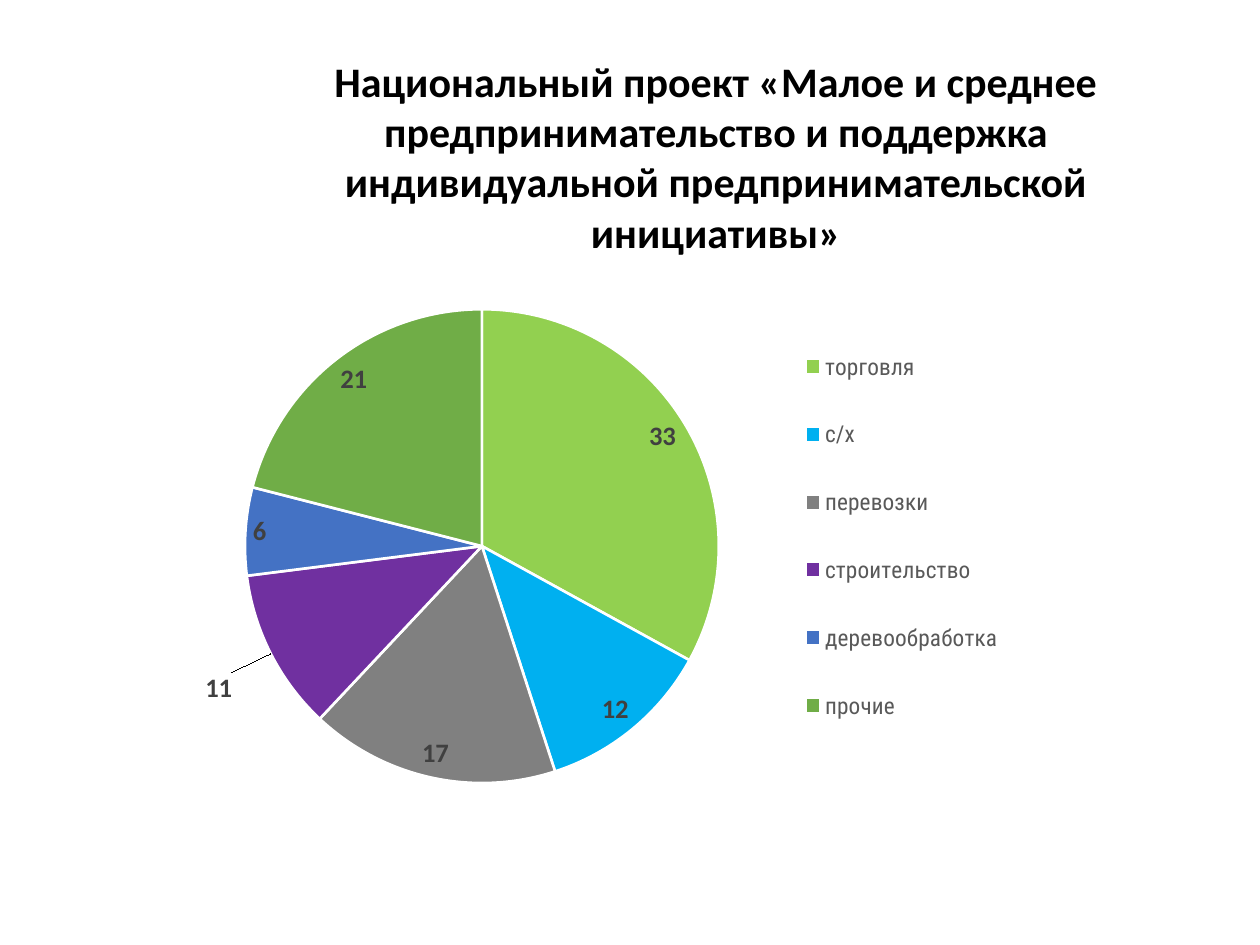
from lxml import etree
from pptx import Presentation
from pptx.chart.data import CategoryChartData
from pptx.dml.color import RGBColor
from pptx.enum.chart import XL_CHART_TYPE, XL_LABEL_POSITION, XL_LEGEND_POSITION
from pptx.enum.text import PP_ALIGN
from pptx.oxml.ns import qn
from pptx.util import Emu, Pt

PIE = XL_CHART_TYPE.PIE
BEST_FIT = XL_LABEL_POSITION.BEST_FIT
LEGEND_RIGHT = XL_LEGEND_POSITION.RIGHT
CENTER = PP_ALIGN.CENTER

EMU_PER_PX = 914400 / 126
BODY_FONT = "Calibri"
LEGEND_FONT = "Roboto Condensed"
TITLE = ("Национальный проект «Малое и среднее предпринимательство и поддержка "
         "индивидуальной предпринимательской инициативы»")
SECTORS = [
    ("торговля", 33, "92D050"),
    ("с/х", 12, "00B0F0"),
    ("перевозки", 17, "808080"),
    ("строительство", 11, "7030A0"),
    ("деревообработка", 6, "4472C4"),
    ("прочие", 21, "70AD47"),
]
MOVED_LABEL = 3


def px(length):
    return Emu(round(length * EMU_PER_PX))


def color(value):
    return RGBColor.from_string(value)


def style_font(font, name, size, value, bold=False):
    font.name = name
    font.size = Pt(size)
    font.color.rgb = color(value)
    font.bold = bold


def set_layout(after, **settings):
    """Put a manual chart layout right after the given element."""
    parent = after.getparent()
    for old in parent.findall(qn("c:layout")):
        parent.remove(old)
    layout = etree.Element(qn("c:layout"))
    manual = etree.SubElement(layout, qn("c:manualLayout"))
    for tag, value in settings.items():
        etree.SubElement(manual, qn(f"c:{tag}")).set("val", str(value))
    after.addnext(layout)


def add_title(page):
    box = page.shapes.add_textbox(px(217), px(49), px(998), px(217))
    frame = box.text_frame
    frame.word_wrap = True
    para = frame.paragraphs[0]
    para.text = TITLE
    para.alignment = CENTER
    style_font(para.font, BODY_FONT, 24, "000000", True)


def style_slices(series):
    for index, (_, _, fill) in enumerate(SECTORS):
        slice_format = series.points[index].format
        slice_format.fill.solid()
        slice_format.fill.fore_color.rgb = color(fill)
        slice_format.line.color.rgb = color("FFFFFF")
        slice_format.line.width = Pt(1.5)


def style_labels(series):
    labels = series.data_labels
    labels.show_value = True
    labels.position = BEST_FIT
    moved = series.points[MOVED_LABEL].data_label
    moved.position = BEST_FIT
    for font in (labels.font, moved.font):
        style_font(font, BODY_FONT, 15.2, "404040", True)
    label_index = labels._element.find(qn("c:dLbl")).find(qn("c:idx"))
    set_layout(label_index, x=-0.03, y=0.03)


def style_legend(chart):
    chart.has_legend = True
    legend = chart.legend
    legend.position = LEGEND_RIGHT
    legend.include_in_layout = False
    style_font(legend.font, LEGEND_FONT, 13.3, "595959")
    set_layout(legend._element.find(qn("c:legendPos")),
               xMode="edge", yMode="edge", x=0.63, y=0.07, w=0.22, h=0.88)
    legend.include_in_layout = True


def add_pie(page):
    data = CategoryChartData()
    data.categories = [name for name, _, _ in SECTORS]
    data.add_series("Series 1", [value for _, value, _ in SECTORS])
    frame = page.shapes.add_chart(PIE, px(105), px(277), px(1077), px(508), data)
    chart = frame.chart
    chart.has_title = False
    style_font(chart.font, BODY_FONT, 10, "000000")
    plot = chart.plots[0]
    plot.vary_by_categories = True
    series = plot.series[0]
    style_slices(series)
    style_labels(series)
    style_legend(chart)
    plot_area = plot._element.getparent()
    for old in plot_area.findall(qn("c:layout")):
        plot_area.remove(old)
    set_layout(plot._element, layoutTarget="inner", xMode="edge", yMode="edge",
               x=0.13, y=0.06, w=0.44, h=0.94)
    plot_area.insert(0, plot_area.find(qn("c:layout")))


def main():
    deck = Presentation()
    deck.slide_width = px(1260)
    deck.slide_height = px(945)
    page = deck.slides.add_slide(deck.slide_layouts[6])
    add_title(page)
    add_pie(page)
    deck.save("out.pptx")


if __name__ == "__main__":
    main()
